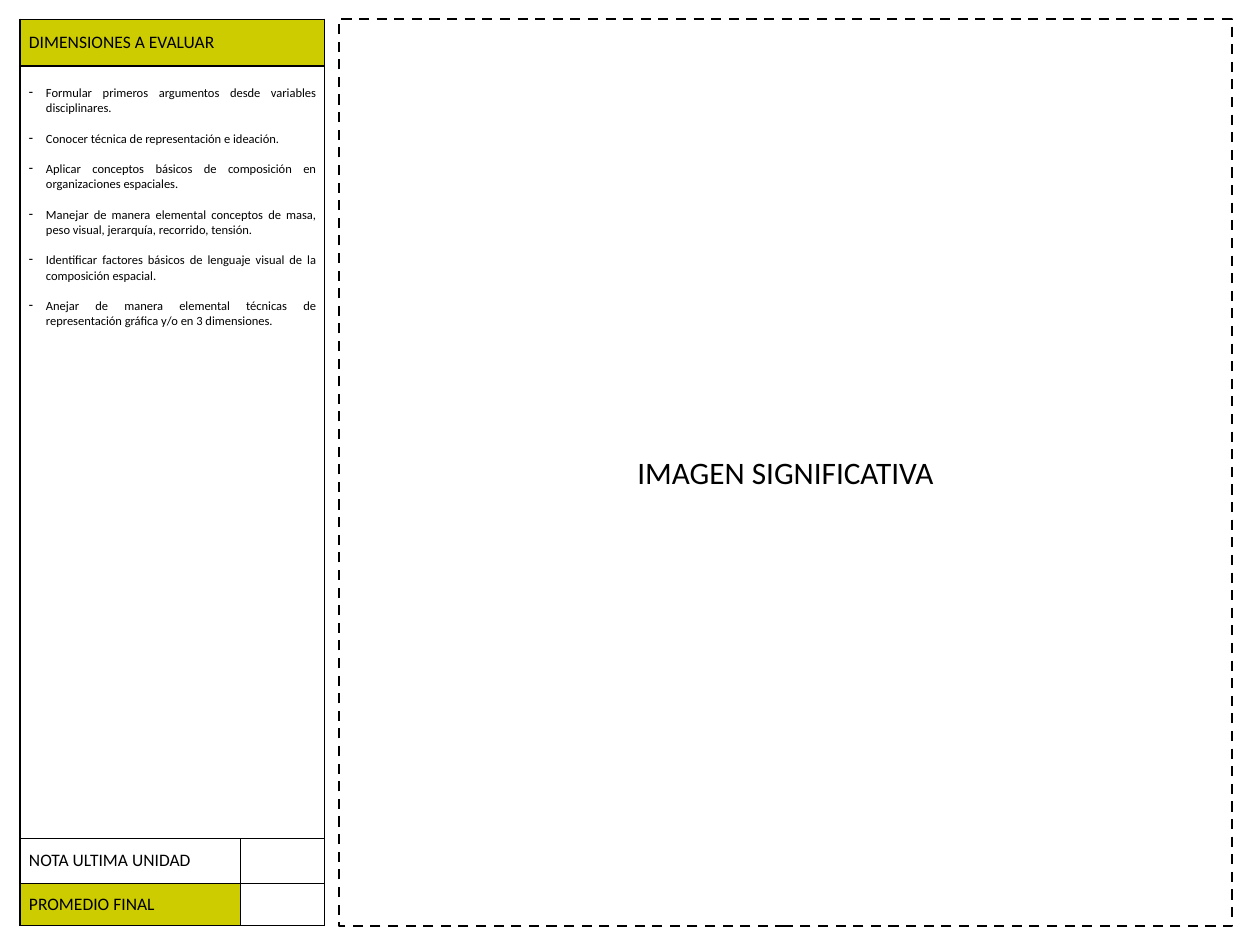
from lxml.etree import SubElement
from pptx import Presentation
from pptx.dml.color import RGBColor
from pptx.enum.dml import MSO_LINE_DASH_STYLE as Dash
from pptx.enum.shapes import MSO_SHAPE as Shape
from pptx.enum.text import MSO_ANCHOR as Anchor, PP_ALIGN as Align
from pptx.oxml.ns import qn
from pptx.util import Emu, Pt

PX = 914400 // 90
BLACK, WHITE, OLIVE = "000000", "FFFFFF", "CCCC00"
COLUMNS = [220, 85]
ROWS = [47, 773, 44, 43]
DIMENSIONS = [
    "Formular primeros argumentos desde variables disciplinares.",
    "Conocer técnica de representación e ideación.",
    "Aplicar conceptos básicos de composición en organizaciones espaciales.",
    "Manejar de manera elemental conceptos de masa, peso visual, jerarquía, recorrido, tensión.",
    "Identificar factores básicos de lenguaje visual de la composición espacial.",
    "Anejar de manera elemental técnicas de representación gráfica y/o en 3 dimensiones.",
]


def px(length):
    return Emu(length * PX)


def color(value):
    return RGBColor.from_string(value)


def write(para, text, size=14, align=Align.JUSTIFY, ink=BLACK, bullet=None, after=0):
    para.alignment = align
    para.space_after = Pt(after)
    span = para.add_run()
    span.text = text
    span.font.size = Pt(size)
    span.font.name = "Calibri"
    span.font.color.rgb = color(ink)
    if bullet:
        props = para._p.get_or_add_pPr()
        props.set("marL", str(px(17)))
        props.set("indent", str(-px(17)))
        SubElement(props, qn("a:buChar")).set("char", bullet)


def set_borders(cell, widths):
    props = cell._tc.get_or_add_tcPr()
    for side, width in zip("LRTB", widths):
        line = SubElement(props, qn(f"a:ln{side}"), w=str(Pt(width)))
        fill = SubElement(line, qn("a:solidFill"))
        SubElement(fill, qn("a:srgbClr"), val=BLACK)


def set_fill(cell, value):
    if value:
        cell.fill.solid()
        cell.fill.fore_color.rgb = color(value)
    else:
        cell.fill.background()


def add_evaluation(page, left, top, width, height):
    frame = page.shapes.add_table(len(ROWS), len(COLUMNS), px(left), px(top), px(width), px(height))
    table = frame.table
    table.first_row = table.horz_banding = False
    for column, size in zip(table.columns, COLUMNS):
        column.width = px(size)
    for row, size in zip(table.rows, ROWS):
        row.height = px(size)

    fills = [(OLIVE, OLIVE), (None, None), (WHITE, None), (OLIVE, None)]
    borders = [(1, 1, 0.5, 1), (1, 1, 1, 1), (1, 1, 1, 0.5), (1, 1, 0.5, 1)]
    for r, (left_edge, right_edge, above, below) in enumerate(borders):
        for c in range(len(COLUMNS)):
            cell = table.cell(r, c)
            inner = 1 if r < 2 else 0.5
            edges = (left_edge, inner) if c == 0 else (inner, right_edge)
            set_borders(cell, (*edges, above, below))
            set_fill(cell, fills[r][c])

    for r in (0, 1):
        table.cell(r, 0).merge(table.cell(r, 1))

    labels = {0: "DIMENSIONES A EVALUAR", 2: "NOTA ULTIMA UNIDAD", 3: "PROMEDIO FINAL"}
    for r, label in labels.items():
        cell = table.cell(r, 0)
        cell.vertical_anchor = Anchor.MIDDLE
        write(cell.text_frame.paragraphs[0], label)

    body = table.cell(1, 0)
    body.margin_top = px(20)
    for i, dimension in enumerate(DIMENSIONS):
        para = body.text_frame.add_paragraph() if i else body.text_frame.paragraphs[0]
        write(para, dimension, size=10, bullet="-", after=12.2)


def add_image_area(page, left, top, width, height):
    box = page.shapes.add_shape(Shape.RECTANGLE, px(left), px(top), px(width), px(height))
    box.shadow.inherit = False
    box.fill.background()
    box.line.color.rgb = color(BLACK)
    box.line.width = Pt(2)
    box.line.dash_style = Dash.DASH
    box.text_frame.word_wrap = True
    box.text_frame.vertical_anchor = Anchor.MIDDLE
    write(box.text_frame.paragraphs[0], "IMAGEN SIGNIFICATIVA", size=25, align=Align.CENTER)


def main():
    deck = Presentation()
    deck.slide_width, deck.slide_height = px(1260), px(945)
    page = deck.slides.add_slide(deck.slide_layouts[6])
    add_image_area(page, 339, 19, 893, 907)
    add_evaluation(page, 20, 19, sum(COLUMNS), sum(ROWS))
    deck.save("out.pptx")


if __name__ == "__main__":
    main()
